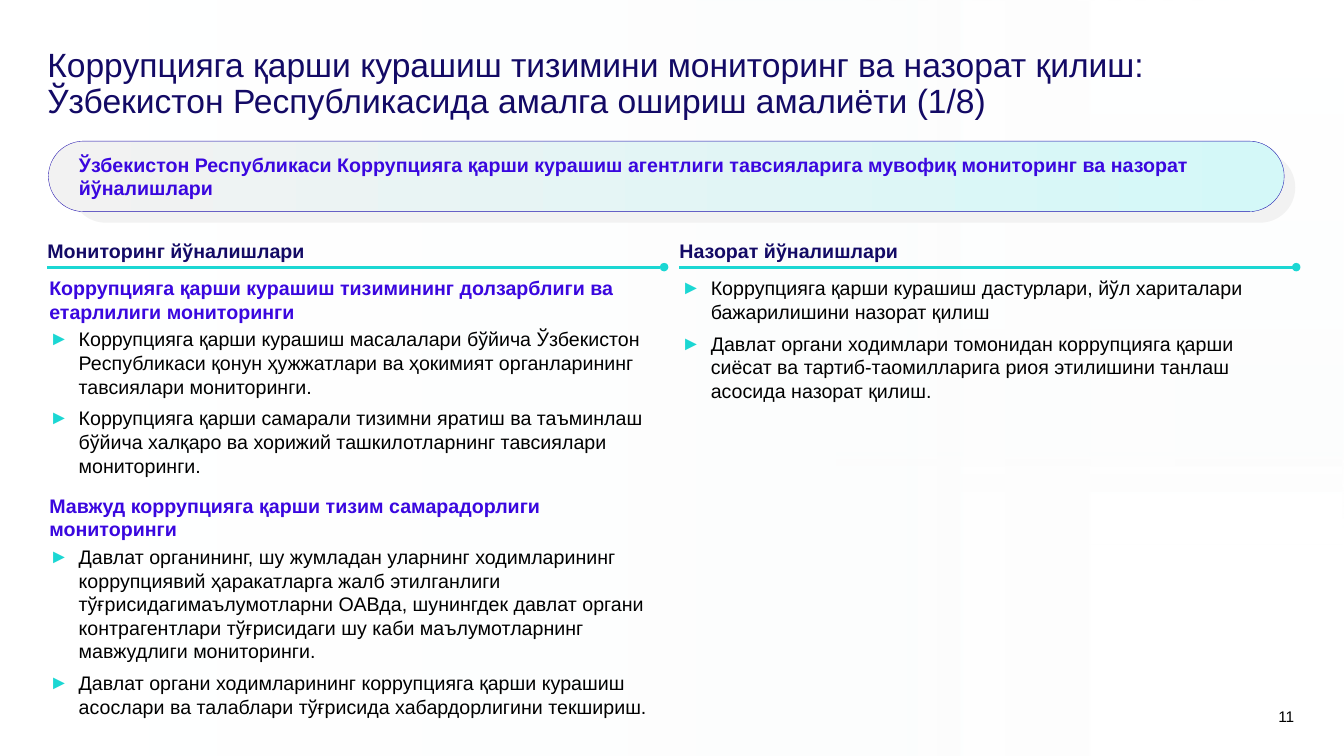
"""Build the slide on monitoring and control of the anti-corruption system."""
from lxml.etree import SubElement
from pptx import Presentation
from pptx.dml.color import RGBColor
from pptx.enum.shapes import MSO_CONNECTOR as Connector, MSO_SHAPE as Preset
from pptx.enum.text import MSO_ANCHOR as Anchor, PP_ALIGN as Align
from pptx.oxml.ns import qn
from pptx.util import Pt

COLORS = {"white": "FFFFFF", "mist": "FCFDFD", "gray": "F2F2F2", "aqua": "D4F8F8",
          "teal": "1BD7D3", "navy": "130A65", "violet": "3A07DF", "outline": "2112AE",
          "black": "000000"}
WIDTH, HEIGHT = 960, 540
COLUMN_WIDTH = 440.6


class SlideBuilder:
    """Hold the style and the current slide, and draw its elements."""

    def __init__(self, slide, font="Arial", size=14):
        self.slide, self.font, self.size = slide, font, size

    def color(self, name):
        return RGBColor.from_string(COLORS[name])

    def panel(self, left, top, width, height, preset=Preset.RECTANGLE, fill=None):
        panel = self.slide.shapes.add_shape(preset, Pt(left), Pt(top), Pt(width), Pt(height))
        panel.shadow.inherit = False
        panel.line.fill.background()
        if preset == Preset.ROUNDED_RECTANGLE:
            panel.adjustments[0] = 0.5
        if fill:
            panel.fill.solid()
            panel.fill.fore_color.rgb = self.color(fill)
        return panel

    def gradient(self, panel, stops, angle=0):
        panel.fill.gradient()
        fill = panel._element.spPr.find(qn("a:gradFill"))
        for child in list(fill):
            fill.remove(child)
        stop_list = SubElement(fill, qn("a:gsLst"))
        for position, name, alpha in stops:
            stop = SubElement(stop_list, qn("a:gs"), pos=str(position * 1000))
            tint = SubElement(stop, qn("a:srgbClr"), val=COLORS[name])
            if alpha < 100:
                SubElement(tint, qn("a:alpha"), val=str(alpha * 1000))
        SubElement(fill, qn("a:lin"), ang=str(angle * 60000), scaled="0")

    def frame(self, shape, insets, anchor=Anchor.TOP):
        frame = shape.text_frame
        frame.word_wrap = True
        frame.vertical_anchor = anchor
        (frame.margin_left, frame.margin_top,
         frame.margin_right, frame.margin_bottom) = map(Pt, insets)
        return frame

    def box(self, left, top, width, height, insets=(0, 3.6, 7.2, 3.6), anchor=Anchor.TOP):
        box = self.slide.shapes.add_textbox(Pt(left), Pt(top), Pt(width), Pt(height))
        return self.frame(box, insets, anchor)

    def label(self, paragraph, text, color, size=None, bold=False, after=0, align=Align.LEFT):
        paragraph.text = text
        paragraph.alignment = align
        paragraph.space_after = Pt(after)
        for run in paragraph.runs:
            run.font.name = self.font
            run.font.size = Pt(size or self.size)
            run.font.bold = bold
            run.font.color.rgb = self.color(color)

    def bullet(self, paragraph, text):
        self.label(paragraph, text, "black", after=6)
        properties = paragraph._p.get_or_add_pPr()
        properties.set("marL", str(Pt(21)))
        properties.set("indent", str(Pt(-21)))
        tint = SubElement(properties, qn("a:buClr"))
        SubElement(tint, qn("a:srgbClr"), val=COLORS["teal"])
        SubElement(properties, qn("a:buFont"), typeface=self.font)
        SubElement(properties, qn("a:buChar"), char="►")

    def column_heading(self, left, text):
        rule = self.slide.shapes.add_connector(
            Connector.STRAIGHT, Pt(left), Pt(190.8), Pt(left + COLUMN_WIDTH), Pt(190.8))
        rule.line.color.rgb = self.color("teal")
        rule.line.width = Pt(2)
        SubElement(rule.line._get_or_add_ln(), qn("a:tailEnd"), type="oval")
        SubElement(rule._element.spPr, qn("a:effectLst"))
        heading = self.box(left, 167, COLUMN_WIDTH, 24.2, anchor=Anchor.BOTTOM)
        self.label(heading.paragraphs[0], text, "navy", bold=True, after=12)

    def section(self, left, top, heading, items):
        frame = self.box(left, top, COLUMN_WIDTH, 98.6)
        paragraph = frame.paragraphs[0]
        if heading:
            self.label(paragraph, heading, "violet", bold=True, after=3)
            paragraph = frame.add_paragraph()
        for index, item in enumerate(items):
            self.bullet(frame.add_paragraph() if index else paragraph, item)


COLUMNS = [
    (33.8, "Мониторинг йўналишлари", [
        (193.7, "Коррупцияга қарши курашиш тизимининг долзарблиги ва етарлилиги мониторинги", [
            "Коррупцияга қарши курашиш масалалари бўйича Ўзбекистон Республикаси қонун "
            "ҳужжатлари ва ҳокимият органларининг тавсиялари мониторинги.",
            "Коррупцияга қарши самарали тизимни яратиш ва таъминлаш бўйича халқаро ва "
            "хорижий ташкилотларнинг тавсиялари мониторинги."]),
        (349.2, "Мавжуд коррупцияга қарши тизим самарадорлиги мониторинги", [
            "Давлат органининг, шу жумладан уларнинг ходимларининг коррупциявий "
            "ҳаракатларга жалб этилганлиги тўғрисидагимаълумотларни ОАВда, шунингдек "
            "давлат органи контрагентлари тўғрисидаги шу каби маълумотларнинг "
            "мавжудлиги мониторинги.",
            "Давлат органи ходимларининг коррупцияга қарши курашиш асослари ва "
            "талаблари тўғрисида хабардорлигини текшириш."])]),
    (485.3, "Назорат йўналишлари", [
        (193.7, None, [
            "Коррупцияга қарши курашиш дастурлари, йўл хариталари бажарилишини назорат қилиш",
            "Давлат органи ходимлари томонидан коррупцияга қарши сиёсат ва "
            "тартиб-таомилларига риоя этилишини танлаш асосида назорат қилиш."])]),
]


def main():
    deck = Presentation()
    deck.slide_width, deck.slide_height = Pt(WIDTH), Pt(HEIGHT)
    builder = SlideBuilder(deck.slides.add_slide(deck.slide_layouts[6]))

    builder.gradient(builder.panel(0, 0, WIDTH, HEIGHT),
                     [(1, "white", 100), (58, "mist", 100), (72, "white", 0)], angle=90)
    builder.gradient(builder.panel(0, 0, WIDTH, HEIGHT),
                     [(1, "white", 100), (62, "mist", 100), (100, "white", 0)])

    page_number = builder.box(893.5, 505.4, 31, 11.5, insets=(0, 0, 0, 0))
    builder.label(page_number.paragraphs[0], "11", "black", size=11, align=Align.RIGHT)

    title = builder.box(33.8, 34.6, 891.4, 34.6, insets=(0, 0, 0, 0)).paragraphs[0]
    builder.label(title, "Коррупцияга қарши курашиш тизимини мониторинг ва назорат қилиш: "
                  "Ўзбекистон Республикасида амалга ошириш амалиёти (1/8)", "navy", size=24)
    title.line_spacing = 0.9

    builder.panel(50.4, 108.7, 874.8, 50.4, Preset.ROUNDED_RECTANGLE, "gray")
    banner = builder.panel(34.6, 100.8, 882.7, 50.4, Preset.ROUNDED_RECTANGLE)
    builder.gradient(banner, [(0, "gray", 100), (100, "aqua", 100)])
    banner.line.color.rgb = builder.color("outline")
    banner.line.width = Pt(0.25)
    message = builder.frame(banner, (14.4, 3.6, 7.2, 3.6), Anchor.MIDDLE)
    builder.label(message.paragraphs[0],
                  "Ўзбекистон Республикаси Коррупцияга қарши курашиш агентлиги тавсияларига "
                  "мувофиқ мониторинг ва назорат йўналишлари", "violet", bold=True)

    for left, heading, sections in COLUMNS:
        builder.column_heading(left, heading)
        for top, subheading, items in sections:
            builder.section(left + 1.4, top, subheading, items)

    deck.save("out.pptx")


if __name__ == "__main__":
    main()
